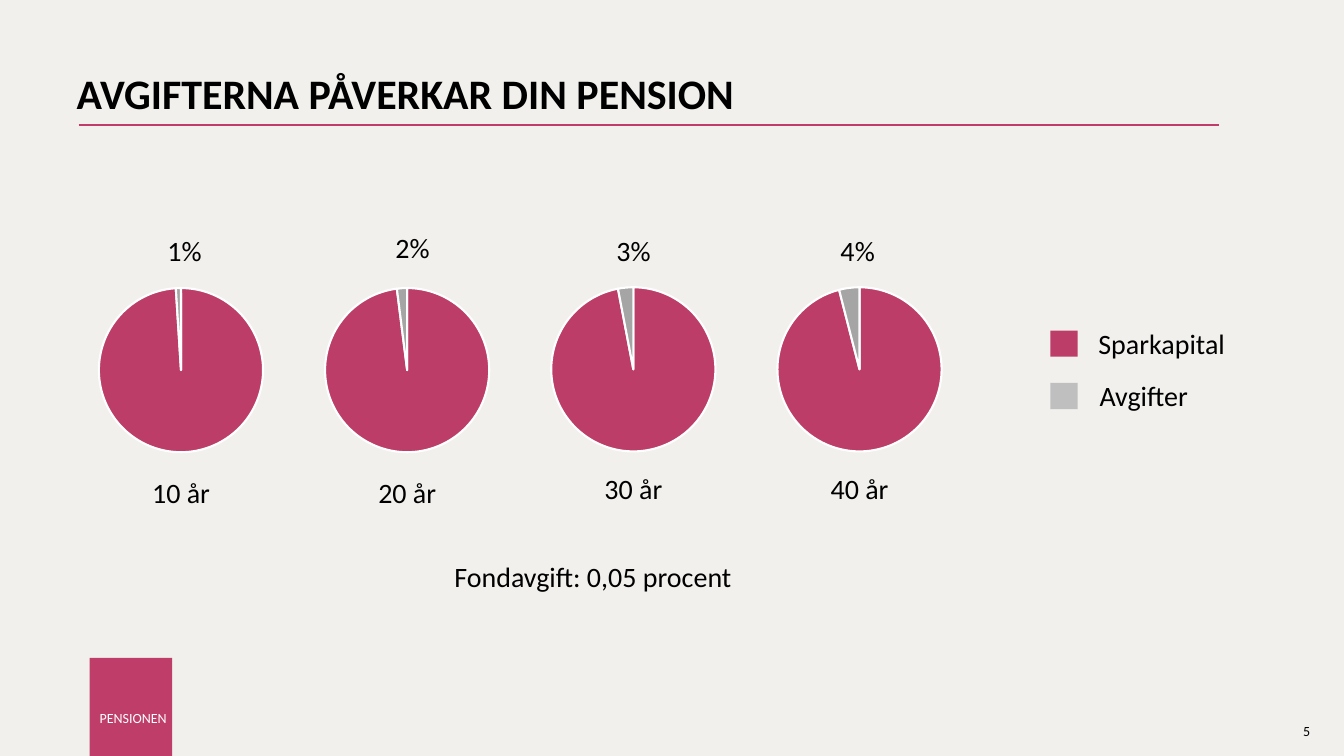
from lxml.etree import SubElement
from pptx import Presentation
from pptx.chart.data import CategoryChartData
from pptx.dml.color import RGBColor
from pptx.enum.chart import XL_CHART_TYPE as ChartType
from pptx.enum.shapes import MSO_CONNECTOR as Connector, MSO_SHAPE as Shape
from pptx.enum.text import MSO_ANCHOR as Anchor, MSO_AUTO_SIZE as AutoSize, PP_ALIGN as Align
from pptx.oxml import parse_xml
from pptx.oxml.ns import nsdecls, qn
from pptx.util import Cm, Pt

BACKGROUND = RGBColor(0xF1, 0xF0, 0xEC)
BLACK = RGBColor(0, 0, 0)
WHITE = RGBColor(0xFF, 0xFF, 0xFF)
ACCENT = RGBColor(0xBE, 0x3E, 0x69)
SAVINGS = RGBColor(0xBD, 0x3D, 0x69)
UNUSED = RGBColor(0xA3, 0x24, 0x25)
FEES = RGBColor(0xA5, 0xA5, 0xA5)
LEGEND_FEES = RGBColor(0xBF, 0xBF, 0xBF)
FONT = "Calibri"

PIE_LEFT, PIE_STEP, PIE_WIDTH, PIE_HEIGHT = 0.74, 5.7, 7.65, 8.28
YEAR_WIDTH = 2.16
PIES = [
    (1, "10 år", 5.18, 11.86, 0.438, 0.06),
    (2, "20 år", 5.18, 11.86, 0.444, 0.051),
    (3, "30 år", 5.16, 11.76, 0.427, 0.063),
    (4, "40 år", 5.16, 11.76, 0.42, 0.063),
]
LEGEND = [
    ("Sparkapital", SAVINGS, 8.33, 27.43),
    ("Avgifter", LEGEND_FEES, 9.65, 27.46),
]


def style(font, size, color=BLACK, bold=False):
    font.name = FONT
    font.size = Pt(size)
    font.color.rgb = color
    font.bold = bold


def place(shape, left, top, width, height):
    shape.left, shape.top = Cm(left), Cm(top)
    shape.width, shape.height = Cm(width), Cm(height)


def add_text(page, text, left, top, width, height, size=20, align=Align.LEFT, wrap=True):
    box = page.shapes.add_textbox(Cm(left), Cm(top), Cm(width), Cm(height))
    box.text_frame.word_wrap = wrap
    para = box.text_frame.paragraphs[0]
    para.text = text
    para.alignment = align
    style(para.font, size)
    return para


def set_title(page, text):
    title = page.shapes.title
    place(title, 1.68, 1.73, 29.21, 3.68)
    frame = title.text_frame
    frame.text = text
    frame.vertical_anchor = Anchor.TOP
    frame.auto_size = AutoSize.NONE
    para = frame.paragraphs[0]
    para.alignment = Align.LEFT
    para.line_spacing = 0.9
    style(para.font, 30, bold=True)


def set_section_tab(page, text):
    tab = page.placeholders[1]
    place(tab, 2.26, 16.58, 2.08, 2.47)
    tab.fill.solid()
    tab.fill.fore_color.rgb = ACCENT
    frame = tab.text_frame
    frame.text = text
    frame.word_wrap = False
    frame.auto_size = AutoSize.NONE
    frame.vertical_anchor = Anchor.MIDDLE
    frame.margin_left, frame.margin_right = Cm(0.25), Cm(0.1)
    frame.margin_top, frame.margin_bottom = Cm(0.74), Cm(0.13)
    para = frame.paragraphs[0]
    properties = para._p.get_or_add_pPr()
    properties.set("marL", "0")
    properties.set("indent", "0")
    SubElement(properties, qn("a:buNone"))
    para.alignment = Align.LEFT
    para.line_spacing = 0.9
    para.space_before = Pt(0)
    style(para.font, 10, WHITE)


def add_rule(page, left, right, top):
    rule = page.shapes.add_connector(Connector.STRAIGHT, Cm(left), Cm(top), Cm(right), Cm(top))
    rule.line.color.rgb = ACCENT
    rule.line.width = Pt(1.5)
    SubElement(rule._element.spPr, qn("a:effectLst"))


def manual_layout(**values):
    entries = "".join(f'<c:{tag} val="{value}"/>' for tag, value in values.items())
    return parse_xml(
        f'<c:layout {nsdecls("c")}><c:manualLayout>{entries}</c:manualLayout></c:layout>'
    )


def set_layout(parent, layout, position):
    for old in parent.findall(qn("c:layout")):
        parent.remove(old)
    parent.insert(position, layout)


def add_pie(page, fee, left, top, title_x, title_y):
    data = CategoryChartData()
    data.categories = ["1", "2", "3"]
    data.add_series("Series 1", (100 - fee, None, fee))
    chart = page.shapes.add_chart(
        ChartType.PIE, Cm(left), Cm(top), Cm(PIE_WIDTH), Cm(PIE_HEIGHT), data
    ).chart
    style(chart.font, 10)
    chart.has_legend = False
    chart.has_title = True
    title = chart.chart_title
    para = title.text_frame.paragraphs[0]
    para.text = f"{fee}%"
    style(para.font, 20)
    title.include_in_layout = False
    set_layout(title._element, manual_layout(xMode="edge", yMode="edge", x=title_x, y=title_y), 1)
    plot_layout = manual_layout(
        layoutTarget="inner", xMode="edge", yMode="edge", x=0.229, y=0.095, w=0.541, h=0.812
    )
    set_layout(chart._chartSpace.chart.plotArea, plot_layout, 0)
    plot = chart.plots[0]
    plot.vary_by_categories = True
    for index, color in enumerate((SAVINGS, UNUSED, FEES)):
        wedge = plot.series[0].points[index].format
        wedge.fill.solid()
        wedge.fill.fore_color.rgb = color
        wedge.line.color.rgb = WHITE
        wedge.line.width = Pt(1.5)


def add_legend_entry(page, label, color, top, text_left):
    swatch = page.shapes.add_shape(Shape.RECTANGLE, Cm(26.47), Cm(top), Cm(0.69), Cm(0.66))
    swatch.shadow.inherit = False
    swatch.fill.solid()
    swatch.fill.fore_color.rgb = color
    swatch.line.fill.background()
    add_text(page, label, text_left, top - 0.23, 4.4, 1.12)


def main():
    deck = Presentation()
    deck.slide_width, deck.slide_height = Cm(33.87), Cm(19.05)
    page = deck.slides.add_slide(deck.slide_layouts[1])
    page.background.fill.solid()
    page.background.fill.fore_color.rgb = BACKGROUND

    add_text(page, "5", 32.59, 18.08, 1.02, 0.69, size=10)
    add_rule(page, 1.98, 30.71, 3.15)
    set_title(page, "AVGIFTERNA PÅVERKAR DIN PENSION")
    for index, (fee, years, top, years_top, title_x, title_y) in enumerate(PIES):
        left = PIE_LEFT + index * PIE_STEP
        add_pie(page, fee, left, top, title_x, title_y)
        years_left = left + (PIE_WIDTH - YEAR_WIDTH) / 2
        add_text(page, years, years_left, years_top, YEAR_WIDTH, 1.12, align=Align.CENTER)
    fee_note = add_text(page, "Fondavgift: 0,05 procent", 11.2, 14.07, 7.57, 1.02, wrap=False)
    fee_note.line_spacing = 0.9
    for entry in LEGEND:
        add_legend_entry(page, *entry)
    set_section_tab(page, "PENSIONEN")
    deck.save("out.pptx")


if __name__ == "__main__":
    main()
